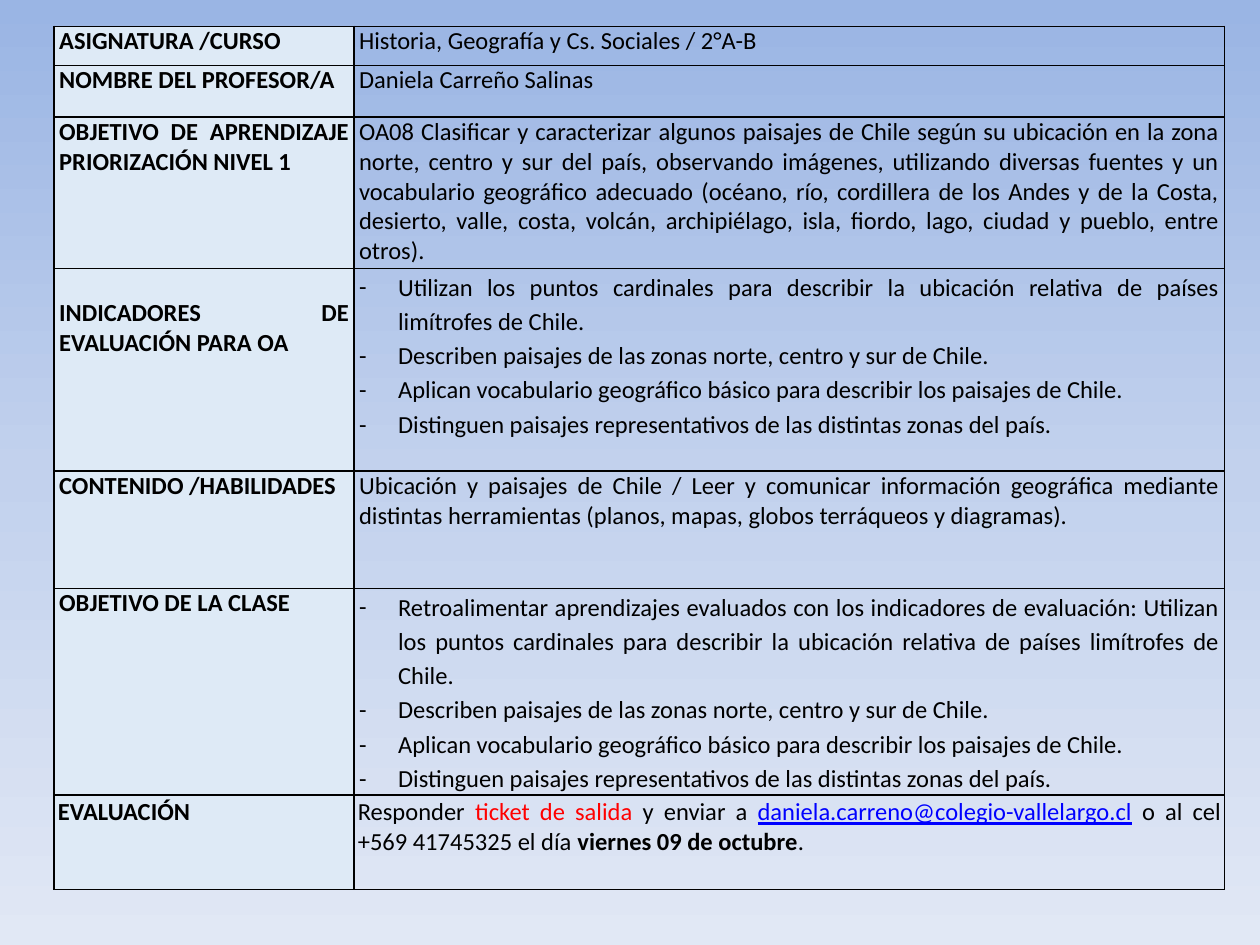
from copy import deepcopy

from lxml import etree
from pptx import Presentation
from pptx import util as u
from pptx.dml.color import RGBColor
from pptx.enum import text
from pptx.oxml import ns

BLACK = RGBColor(0x00, 0x00, 0x00)
RED = RGBColor(0xFF, 0x00, 0x00)
BLUE = RGBColor(0x00, 0x00, 0xFF)
LABEL_FILL = RGBColor(0xDE, 0xEA, 0xF6)
SKY = (RGBColor(0x9A, 0xB5, 0xE4), RGBColor(0xC2, 0xD1, 0xED), RGBColor(0xE1, 0xE8, 0xF5))

FONT, SIZE = "Calibri", 14
GRID = u.Inches(0.01)
SLIDE = (1000, 750)
TABLE_BOX = (43, 21, 929, 685)
COLUMNS = (238, 691)
INSETS = (4, 0)
EVALUATION_INSETS = (3, 2)
BLANK_LINE = 24
INDENT = 31

ZONES = [
    "Describen paisajes de las zonas norte, centro y sur de Chile.",
    "Aplican vocabulario geográfico básico para describir los paisajes de Chile.",
    "Distinguen paisajes representativos de las distintas zonas del país.",
]
CARDINAL = ("tilizan los puntos cardinales para describir la ubicación relativa "
            "de países limítrofes de Chile.")
EVALUATION = [
    ("Responder ", {}),
    ("ticket de salida ", {"color": RED}),
    ("y enviar a ", {}),
    ("daniela.carreno@colegio-vallelargo.cl", {"color": BLUE, "underline": True}),
    (" o al cel +569 41745325 el día ", {}),
    ("viernes 09 de octubre", {"bold": True}),
    (".", {}),
]


def plain(words):
    return [(words, {})]


ROWS = [
    (31, "ASIGNATURA /CURSO", [plain("Historia, Geografía y Cs. Sociales / 2°A-B")]),
    (41, "NOMBRE DEL PROFESOR/A", [plain("Daniela Carreño Salinas")]),
    (120, "OBJETIVO DE APRENDIZAJE PRIORIZACIÓN NIVEL 1", [plain(
        "OA08 Clasificar y caracterizar algunos paisajes de Chile según su ubicación en la "
        "zona norte, centro y sur del país, observando imágenes, utilizando diversas fuentes "
        "y un vocabulario geográfico adecuado (océano, río, cordillera de los Andes y de la "
        "Costa, desierto, valle, costa, volcán, archipiélago, isla, fiordo, lago, ciudad y "
        "pueblo, entre otros).")]),
    (161, "INDICADORES DE EVALUACIÓN PARA OA",
     [plain(item) for item in ["U" + CARDINAL] + ZONES]),
    (93, "CONTENIDO /HABILIDADES", [plain(
        "Ubicación y paisajes de Chile / Leer y comunicar información geográfica mediante "
        "distintas herramientas (planos, mapas, globos terráqueos y diagramas).")]),
    (164, "OBJETIVO DE LA CLASE", [plain(item) for item in [
        "Retroalimentar aprendizajes evaluados con los indicadores de evaluación: U"
        + CARDINAL] + ZONES]),
    (75, "EVALUACIÓN", [EVALUATION]),
]


def paint_background(s):
    fill = s.background.fill
    fill.gradient()
    fill.gradient_angle = 270
    stops = s.element.xpath(".//p:bg//a:gsLst")[0]
    stops.insert(1, deepcopy(stops[0]))
    for i, (stop, color) in enumerate(zip(fill.gradient_stops, SKY)):
        stop.position = i / (len(SKY) - 1)
        stop.color.rgb = color


def add_run(p, words, color=BLACK, bold=False, underline=False):
    r = p.add_run()
    r.text = words
    r.font.name, r.font.size = FONT, u.Pt(SIZE)
    r.font.bold, r.font.underline = bold, underline
    r.font.color.rgb = color


def add_dash(p):
    p.line_spacing = 1.15
    props = p._p.get_or_add_pPr()
    props.set("marL", str(INDENT * GRID))
    props.set("indent", str(-INDENT * GRID))
    etree.SubElement(props, ns.qn("a:buFont"), typeface=FONT)
    etree.SubElement(props, ns.qn("a:buChar"), char="-")


def add_borders(cell):
    props = cell._tc.get_or_add_tcPr()
    for i, side in enumerate(("lnL", "lnR", "lnT", "lnB")):
        line = etree.Element(ns.qn(f"a:{side}"), w=str(u.Pt(1)))
        fill = etree.SubElement(line, ns.qn("a:solidFill"))
        etree.SubElement(fill, ns.qn("a:srgbClr"), val=str(BLACK))
        props.insert(i, line)


def fill_cell(cell, paragraphs, insets):
    cell.margin_left = cell.margin_right = insets[0] * GRID
    cell.margin_top = cell.margin_bottom = insets[1] * GRID
    tf = cell.text_frame
    for i, runs in enumerate(paragraphs):
        p = tf.add_paragraph() if i else tf.paragraphs[0]
        p.alignment = text.PP_ALIGN.JUSTIFY
        if len(paragraphs) > 1:
            add_dash(p)
        for words, style in runs:
            add_run(p, words, **style)
    add_borders(cell)


def lesson_table(s, box):
    frame = s.shapes.add_table(len(ROWS), len(COLUMNS), *(n * GRID for n in box))
    table = frame.table
    table.first_row = table.horz_banding = False
    for column, width in zip(table.columns, COLUMNS):
        column.width = width * GRID
    for i, (height, label, paragraphs) in enumerate(ROWS):
        table.rows[i].height = height * GRID
        insets = EVALUATION_INSETS if label == "EVALUACIÓN" else INSETS
        heading, content = table.cell(i, 0), table.cell(i, 1)
        fill_cell(heading, [[(label, {"bold": True})]], insets)
        heading.fill.solid()
        heading.fill.fore_color.rgb = LABEL_FILL
        if label.startswith("INDICADORES"):
            heading.margin_top = BLANK_LINE * GRID
        fill_cell(content, paragraphs, insets)
        content.fill.background()


def main():
    prs = Presentation()
    prs.slide_width, prs.slide_height = (n * GRID for n in SLIDE)
    s = prs.slides.add_slide(prs.slide_layouts[6])
    paint_background(s)
    lesson_table(s, TABLE_BOX)
    prs.save("out.pptx")


if __name__ == "__main__":
    main()
